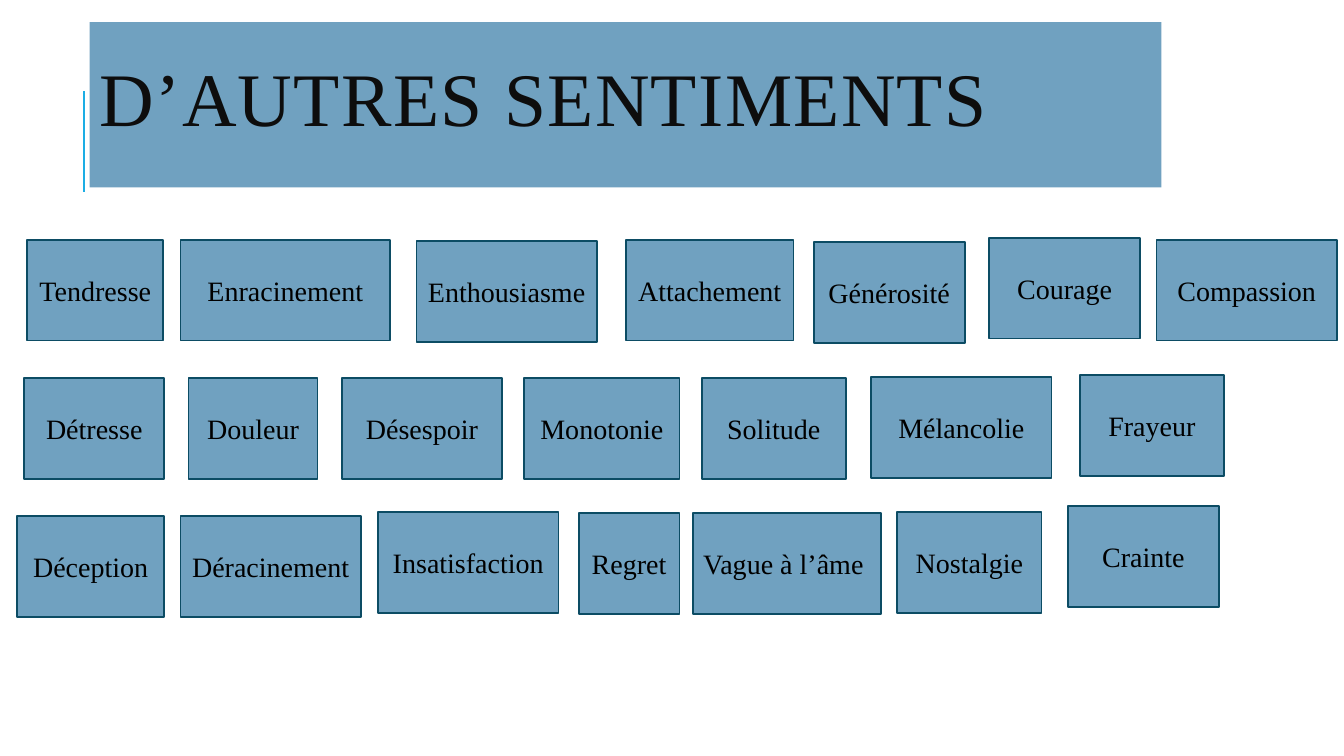
from lxml import etree
from pptx import Presentation
from pptx import util as u
from pptx.dml.color import RGBColor
from pptx.enum import shapes, text
from pptx.oxml import ns

FONT = "Times New Roman"
PANEL = "70A1C0"
BORDER = "0C4C64"
ACCENT = "1CADE4"
CARD_HEIGHT = 1

# Each row: (word, left, top, width)
FEELINGS = [
    [("Tendresse", 0.27, 2.38, 1.35), ("Enracinement", 1.79, 2.38, 2.08),
     ("Enthousiasme", 4.13, 2.39, 1.79), ("Attachement", 6.21, 2.38, 1.66),
     ("Générosité", 8.07, 2.4, 1.5), ("Courage", 9.81, 2.36, 1.5),
     ("Compassion", 11.47, 2.38, 1.79)],
    [("Détresse", 0.24, 3.75, 1.39), ("Douleur", 1.87, 3.75, 1.28),
     ("Désespoir", 3.39, 3.75, 1.59), ("Monotonie", 5.2, 3.75, 1.54),
     ("Solitude", 6.96, 3.75, 1.43), ("Mélancolie", 8.64, 3.74, 1.79),
     ("Frayeur", 10.71, 3.72, 1.43)],
    [("Déception", 0.17, 5.12, 1.46), ("Déracinement", 1.79, 5.12, 1.79),
     ("Insatisfaction", 3.75, 5.08, 1.79), ("Regret", 5.74, 5.09, 1),
     ("Vague à l’âme ", 6.87, 5.09, 1.87), ("Nostalgie", 8.9, 5.08, 1.43),
     ("Crainte", 10.59, 5.02, 1.5)],
]


def color(value):
    return RGBColor.from_string(value)


def assign(target, values):
    for name, value in values.items():
        setattr(target, name, value)


def add_panel(slide, words, place, size, ink, paragraph_format):
    """Add a borderless filled rectangle with one line of text; return shape and run."""
    panel = slide.shapes.add_shape(
        shapes.MSO_SHAPE.RECTANGLE, *(u.Inches(length) for length in place))
    panel.shadow.inherit = False
    panel.fill.solid()
    panel.fill.fore_color.rgb = color(PANEL)
    panel.line.fill.background()
    assign(panel.text_frame, {"word_wrap": True,
                              "vertical_anchor": text.MSO_ANCHOR.MIDDLE})
    para = panel.text_frame.paragraphs[0]
    assign(para, paragraph_format)
    span = para.add_run()
    span.text = words
    assign(span.font, {"name": FONT, "size": u.Pt(size)})
    span.font.color.rgb = color(ink)
    return panel, span


def add_title(slide, words):
    span = add_panel(slide, words, (0.89, 0.22, 10.63, 1.64), 54, "0D0D0D",
                     {"alignment": text.PP_ALIGN.LEFT, "line_spacing": 0.8})[1]
    span.font._element.set("spc", "100")


def add_card(slide, word, left, top, width):
    card = add_panel(slide, word, (left, top, width, CARD_HEIGHT), 20, "000000",
                     {"alignment": text.PP_ALIGN.CENTER})[0]
    card.line.color.rgb = color(BORDER)
    card.line.width = u.Pt(1.25)


def add_accent_line(slide, left, top, bottom):
    line = slide.shapes.add_connector(
        shapes.MSO_CONNECTOR.STRAIGHT,
        u.Inches(left), u.Inches(bottom), u.Inches(left), u.Inches(top))
    line.line.color.rgb = color(ACCENT)
    line.line.width = u.Pt(1.5)
    etree.SubElement(line._element.spPr, ns.qn("a:effectLst"))


def main():
    deck = Presentation()
    assign(deck, {"slide_width": u.Inches(13.33), "slide_height": u.Inches(7.5)})
    slide = deck.slides.add_slide(deck.slide_layouts[6])
    add_accent_line(slide, 0.83, 0.9, 1.9)
    add_title(slide, "D’AUTRES SENTIMENTS")
    for row in FEELINGS:
        for feeling in row:
            add_card(slide, *feeling)
    deck.save("out.pptx")


if __name__ == "__main__":
    main()
